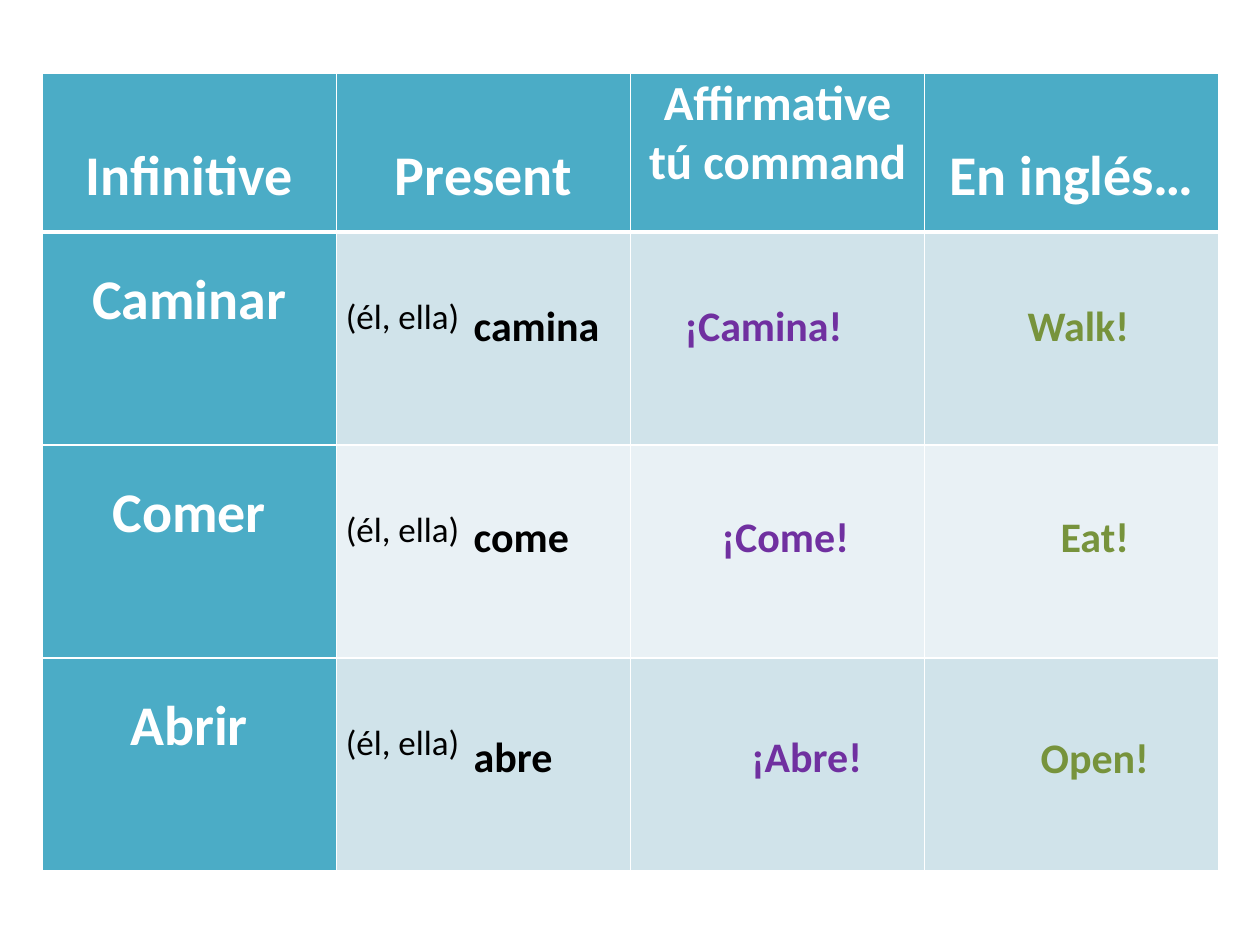
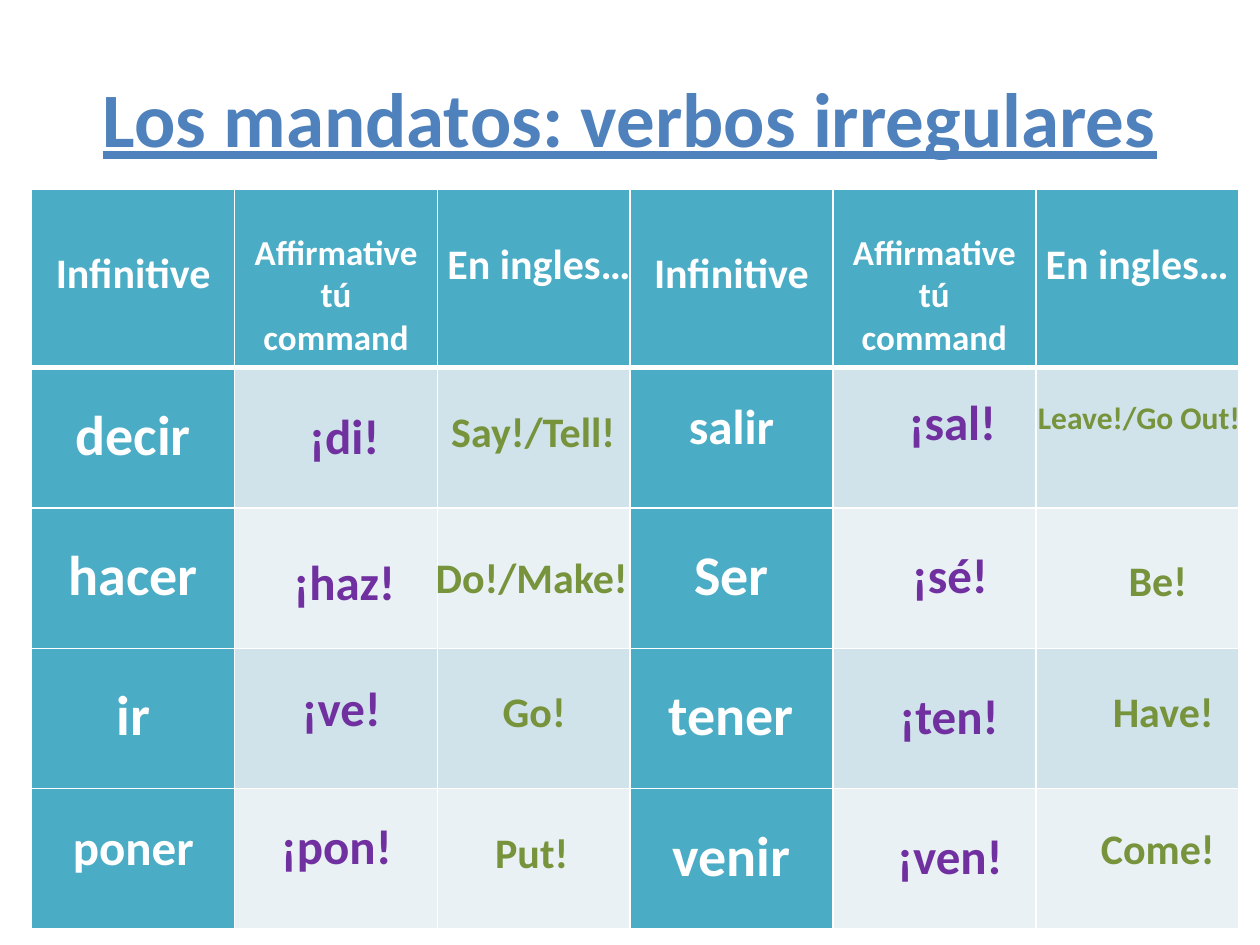
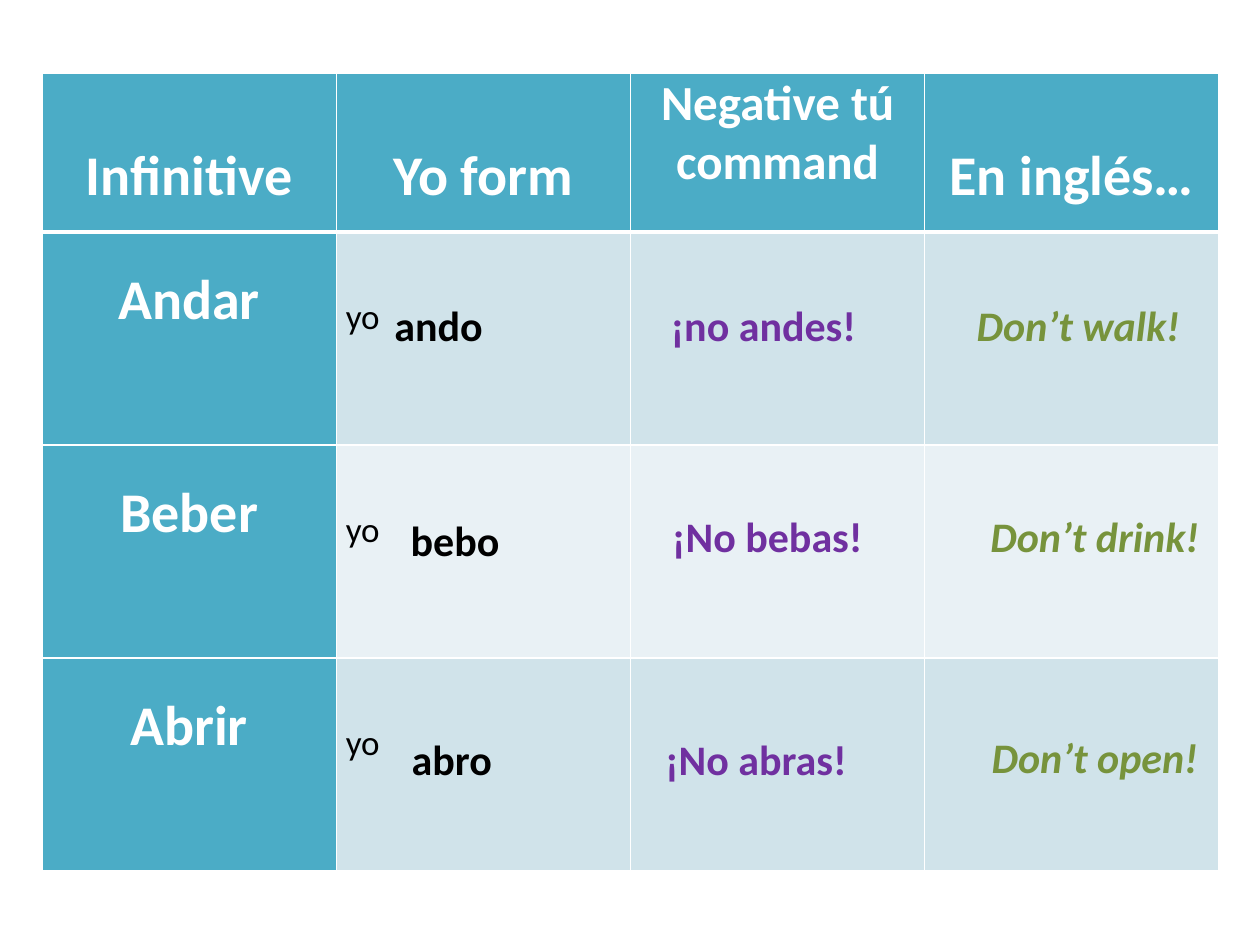
from dataclasses import dataclass

from lxml.etree import SubElement
from pptx import Presentation
from pptx.dml.color import RGBColor
from pptx.enum.text import MSO_ANCHOR, MSO_AUTO_SIZE, PP_ALIGN
from pptx.oxml.ns import qn
from pptx.util import Cm, Pt


@dataclass(frozen=True)
class Theme:
    """Colours, font and type sizes shared by the slides."""

    font: str = "Calibri"
    white: str = "FFFFFF"
    black: str = "000000"
    header: str = "4BACC6"
    bands: tuple = ("D0E3EA", "E9F1F5")
    title: str = "4F81BD"
    command: str = "7030A0"
    english: str = "77933C"
    title_size: int = 44
    large: int = 32
    medium: int = 28
    regular: int = 24
    small: int = 20
    tiny: int = 18
    thin: int = 1
    thick: int = 3


@dataclass(frozen=True)
class Heading:
    """A column heading, the drop above it and its side margin in cm."""

    text: str
    size: int
    drop: float
    side: float = 0.19


@dataclass(frozen=True)
class Grid:
    """Place and measures of a verb table in cm."""

    left: float
    top: float
    column: float
    head: float
    row: float


THEME = Theme()
REGULAR_GRID = Grid(0.85, 1.48, 5.93, 3.2, 4.29)
IRREGULAR_GRIDS = (Grid(0.64, 3.81, 4.09, 3.6, 2.83), Grid(12.7, 3.81, 4.09, 3.6, 2.83))
IRREGULAR_HEADINGS = (
    Heading("Infinitive", THEME.regular, 1.21),
    Heading("Affirmative tú command", THEME.small, 0.86, 0.25),
    Heading("En ingles…", THEME.regular, 1.03),
)
PRONOUN_DROP = 0.86


def style(paragraph, size, color, bold=True, italic=False, align=PP_ALIGN.CENTER):
    """Format a paragraph in the deck font."""
    paragraph.alignment = align
    font = paragraph.font
    font.name, font.size = THEME.font, Pt(size)
    font.bold, font.italic = bold, italic
    font.color.rgb = RGBColor.from_string(color)


def add_borders(cell, top, bottom):
    """Draw white borders round a cell, with widths in points."""
    properties = cell._tc.get_or_add_tcPr()
    widths = {"a:lnL": THEME.thin, "a:lnR": THEME.thin, "a:lnT": top, "a:lnB": bottom}
    for side, width in widths.items():
        line = SubElement(properties, qn(side), w=str(Pt(width)))
        fill = SubElement(line, qn("a:solidFill"))
        SubElement(fill, qn("a:srgbClr"), val=THEME.white)


def write_cell(cell, text, size, color, drop=0, side=0.19, spacing=1.0, **look):
    """Write one paragraph in a cell, below a top margin in cm."""
    cell.margin_left = cell.margin_right = Cm(side)
    cell.margin_top, cell.margin_bottom = Cm(drop), 0
    paragraph = cell.text_frame.paragraphs[0]
    paragraph.text = text
    paragraph.line_spacing = spacing
    style(paragraph, size, color, **look)


def add_verb_table(slide, grid, headings, infinitives, pronoun=None):
    """Add a table of infinitives with headings and empty answer cells."""
    rows, columns = len(infinitives) + 1, len(headings)
    table = slide.shapes.add_table(
        rows, columns, Cm(grid.left), Cm(grid.top),
        Cm(grid.column * columns), Cm(grid.head + grid.row * len(infinitives)),
    ).table
    for column in table.columns:
        column.width = Cm(grid.column)
    for index, row in enumerate(table.rows):
        row.height = Cm(grid.row if index else grid.head)
        for position, cell in enumerate(row.cells):
            add_borders(cell, THEME.thick if index == 1 else THEME.thin,
                        THEME.thin if index else THEME.thick)
            is_label = index == 0 or position == 0
            shade = THEME.header if is_label else THEME.bands[(index - 1) % 2]
            cell.fill.solid()
            cell.fill.fore_color.rgb = RGBColor.from_string(shade)
    for cell, heading in zip(table.rows[0].cells, headings):
        write_cell(cell, heading.text, heading.size, THEME.white, heading.drop, heading.side)
    for index, (infinitive, size) in enumerate(infinitives, start=1):
        write_cell(table.cell(index, 0), infinitive, size, THEME.white, spacing=1.5)
        if pronoun:
            write_cell(table.cell(index, 1), pronoun, THEME.small, THEME.black, PRONOUN_DROP,
                       spacing=1.5, bold=False, align=PP_ALIGN.LEFT)


def add_answers(slide, answers, size, color, **look):
    """Add a text box for each answer, given as text, left and top in cm."""
    for text, left, top in answers:
        box = slide.shapes.add_textbox(Cm(left), Cm(top), Cm(4.98), Cm(0.0423 * size + 0.25))
        frame = box.text_frame
        frame.word_wrap = True
        frame.auto_size = MSO_AUTO_SIZE.SHAPE_TO_FIT_TEXT
        frame.paragraphs[0].text = text
        style(frame.paragraphs[0], size, color, **look)


def add_title(slide, text):
    """Place and format the title placeholder."""
    title = slide.shapes.title
    title.left, title.top, title.width, title.height = Cm(1.27), Cm(0.76), Cm(22.86), Cm(3.18)
    title.text_frame.vertical_anchor = MSO_ANCHOR.MIDDLE
    paragraph = title.text_frame.paragraphs[0]
    paragraph.text = text
    style(paragraph, THEME.title_size, THEME.title)
    paragraph.font.underline = True


def add_regular_slide(deck, form, command, pronoun, infinitives, forms, commands, english,
                      italic=False):
    """Add a slide that leads from infinitives to regular commands."""
    slide = deck.slides.add_slide(deck.slide_layouts[6])
    headings = (
        Heading("Infinitive", THEME.large, 1.38),
        Heading(form, THEME.large, 1.38),
        Heading(command, THEME.medium, 0),
        Heading("En inglés…", THEME.large, 1.38),
    )
    verbs = [(infinitive, THEME.large) for infinitive in infinitives]
    add_verb_table(slide, REGULAR_GRID, headings, verbs, pronoun)
    add_answers(slide, forms, THEME.regular, THEME.black, align=PP_ALIGN.LEFT)
    add_answers(slide, commands, THEME.regular, THEME.command)
    add_answers(slide, english, THEME.regular, THEME.english, italic=italic)


def add_irregular_slide(deck):
    """Add the slide of irregular commands."""
    slide = deck.slides.add_slide(deck.slide_layouts[5])
    add_title(slide, "Los mandatos: verbos irregulares")
    large, medium = THEME.large, THEME.medium
    verb_groups = (
        (("decir", large), ("hacer", large), ("ir", large), ("poner", medium)),
        (("salir", medium), ("Ser", large), ("tener", large), ("venir", large)),
    )
    for grid, verbs in zip(IRREGULAR_GRIDS, verb_groups):
        add_verb_table(slide, grid, IRREGULAR_HEADINGS, verbs)
    add_answers(slide, (
        ("¡di!", 4.45, 8.05), ("¡haz!", 4.45, 11), ("¡ve!", 4.39, 13.54), ("¡pon!", 4.29, 16.31),
        ("¡sal!", 16.71, 7.77), ("¡sé!", 16.66, 10.85), ("¡ten!", 16.64, 13.69),
        ("¡ven!", 16.66, 16.51),
    ), THEME.medium, THEME.command)
    add_answers(slide, (
        ("Say!/Tell!", 8.26, 8.05), ("Do!/Make!", 8.23, 11), ("Go!", 8.28, 13.69),
        ("Put!", 8.23, 16.54), ("Be!", 20.85, 11.05), ("Have!", 20.96, 13.69),
        ("Come!", 20.85, 16.46),
    ), THEME.regular, THEME.english)
    add_answers(slide, [("Leave!/Go Out!", 20.47, 7.9)], THEME.tiny, THEME.english)


def main():
    """Build and save the deck."""
    deck = Presentation()
    deck.slide_width, deck.slide_height = Cm(25.4), Cm(19.05)
    add_regular_slide(
        deck, "Present", "Affirmative tú command", "(él, ella)",
        infinitives=("Caminar", "Comer", "Abrir"),
        forms=(("camina", 9.3, 5.92), ("come", 9.3, 10.16), ("abre", 9.3, 14.6)),
        commands=(("¡Camina!", 12.9, 5.92), ("¡Come!", 13.34, 10.16), ("¡Abre!", 13.77, 14.6)),
        english=(("Walk!", 19.25, 5.92), ("Eat!", 19.58, 10.16), ("Open!", 19.58, 14.63)),
    )
    add_irregular_slide(deck)
    add_regular_slide(
        deck, "Yo form", "Negative tú command", "yo",
        infinitives=("Andar", "Beber", "Abrir"),
        forms=(("ando", 7.7, 5.92), ("bebo", 8.03, 10.24), ("abro", 8.05, 14.66)),
        commands=(("¡no andes!", 12.9, 5.92), ("¡No bebas!", 12.98, 10.16),
                  ("¡No abras!", 12.75, 14.66)),
        english=(("Don’t walk!", 19.25, 5.92), ("Don’t drink!", 19.58, 10.16),
                 ("Don’t open!", 19.58, 14.63)),
        italic=True,
    )
    deck.save("out.pptx")


if __name__ == "__main__":
    main()
